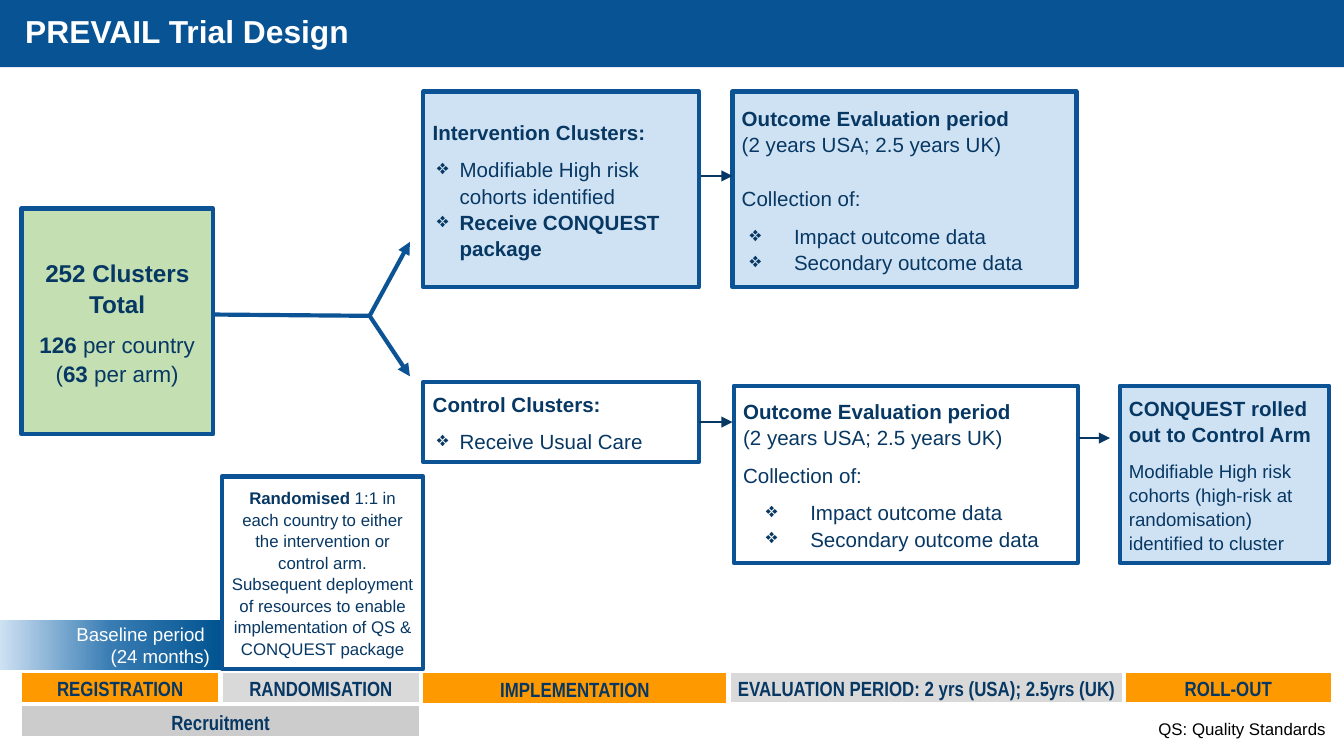
from copy import deepcopy

from lxml import etree
from pptx import Presentation
from pptx.dml.color import RGBColor
from pptx.enum import shapes, text
from pptx.oxml import ns
from pptx.util import Pt

BLUE, NAVY, PALE, WHITE = "0B5394", "073763", "CFE2F3", "FFFFFF"
ORANGE, GREY = "FF9900", "D9D9D9"
LEFT, CENTER, RIGHT = text.PP_ALIGN.LEFT, text.PP_ALIGN.CENTER, text.PP_ALIGN.RIGHT
TOP, MIDDLE = text.MSO_ANCHOR.TOP, text.MSO_ANCHOR.MIDDLE
BOLD = {"bold": True}


def color(value):
    return RGBColor.from_string(value)


def apply(target, **values):
    for name, value in values.items():
        setattr(target, name, value)


def para(*runs, before=0, indent=None):
    """Each run is a string or a (string, font values) pair."""
    return {"runs": runs, "before": before, "indent": indent}


def add_bullet(p, left, hanging):
    pPr = p._p.get_or_add_pPr()
    pPr.set("marL", str(Pt(left)))
    pPr.set("indent", str(-Pt(hanging)))
    clr = etree.SubElement(pPr, ns.qn("a:buClr"))
    etree.SubElement(clr, ns.qn("a:srgbClr"), val=NAVY)
    etree.SubElement(pPr, ns.qn("a:buChar"), char="❖")


def write(sp, paras, size=11, font="Arial", fill=NAVY, bold=False, align=LEFT,
          anchor=MIDDLE, spacing=1.07, inset=(5, 3)):
    tf = sp.text_frame
    x, y = map(Pt, inset)
    apply(tf, word_wrap=True, vertical_anchor=anchor, margin_left=x,
          margin_right=x, margin_top=y, margin_bottom=y)
    for i, item in enumerate(paras):
        p = tf.add_paragraph() if i else tf.paragraphs[0]
        if item["indent"]:
            add_bullet(p, *item["indent"])
        apply(p, alignment=align, line_spacing=spacing, space_before=Pt(item["before"]))
        for run in item["runs"]:
            words, values = run if isinstance(run, tuple) else (run, {})
            r = p.add_run()
            r.text = words
            apply(r.font, **{"size": Pt(size), "name": font, "bold": bold, **values})
            r.font.color.rgb = color(fill)


def add_box(slide, box, fill=None, line=None):
    sp = slide.shapes.add_shape(shapes.MSO_SHAPE.RECTANGLE, *map(Pt, box))
    sp.shadow.inherit = False
    if fill:
        sp.fill.solid()
        sp.fill.fore_color.rgb = color(fill)
    else:
        sp.fill.background()
    if line:
        sp.line.color.rgb = color(line)
        sp.line.width = Pt(2.25)
    else:
        sp.line.fill.background()
    return sp


def add_line(slide, start, end, stroke=NAVY, width=0.75, arrow=True):
    line = slide.shapes.add_connector(shapes.MSO_CONNECTOR.STRAIGHT, *map(Pt, start + end))
    line.line.color.rgb = color(stroke)
    line.line.width = Pt(width)
    if arrow:
        etree.SubElement(line.line._get_or_add_ln(), ns.qn("a:tailEnd"), type="triangle")
    etree.SubElement(line.element.spPr, ns.qn("a:effectLst"))
    return line


def header(slide, box):
    x, y, w, h = box
    title = slide.shapes.title
    apply(title, left=Pt(x + 9), top=Pt(y + 2), width=Pt(620), height=Pt(h - 4))
    title.element.addprevious(add_box(slide, box, "085394").element)
    write(title, [para("PREVAIL Trial Design")], size=17, fill=WHITE, bold=True, spacing=0.9)


def branch(slide, box):
    """A trunk that forks into an upper and a lower arrow."""
    x, y, w, h = box
    fork = (x + 85.7, y + 39.6)
    for tip in ((x + w, y), (x + w, y + h)):
        add_line(slide, fork, tip, BLUE, 2.25)
    add_line(slide, (x, fork[1] - 0.7), fork, BLUE, 2.25, arrow=False)


def clusters_total(slide, box):
    write(add_box(slide, box, "C4E0B2", BLUE), [
        para(("252 Clusters Total", {"bold": True, "size": Pt(13)})),
        para(("126 ", BOLD), "per country (", ("63", BOLD), " per arm)", before=6),
    ], size=12, align=CENTER)


def arm(slide, box, heading, items, fill=None):
    sp = add_box(slide, box, fill, BLUE)
    write(sp, [para((heading, BOLD))] + [
        para(item, before=0 if i else 6, indent=(14.4, 12.2))
        for i, item in enumerate(items)])
    return sp


def outcome(slide, box, fill, gap, indent):
    write(add_box(slide, box, fill, BLUE), [
        para(("Outcome Evaluation period", BOLD)),
        para("(2 years USA; 2.5 years UK)"),
        para("Collection of:", before=gap),
        para("Impact outcome data", before=6, indent=(indent, 23.8)),
        para("Secondary outcome data", indent=(indent, 23.8)),
    ])


def roll_out(slide, box):
    write(add_box(slide, box, PALE, BLUE), [
        para(("CONQUEST rolled out to Control Arm", {"bold": True, "size": Pt(11)})),
        para("Modifiable High risk cohorts (high-risk at randomisation) "
             "identified to cluster", before=6),
    ], size=10)


def randomised(slide, box):
    write(add_box(slide, box, None, BLUE), [
        para(("Randomised", BOLD), " 1:1 in each country", (" ", {"size": Pt(7)}),
             "to either the intervention or control arm."),
        para("Subsequent deployment of resources to enable implementation "
             "of QS & CONQUEST package"),
    ], size=9, align=CENTER)


def baseline(slide, box):
    sp = add_box(slide, box)
    sp.fill.gradient()
    sp.fill.gradient_angle = 180
    first = sp.element.spPr.find(".//" + ns.qn("a:gs"))
    first.addnext(deepcopy(first))
    stops = zip(sp.fill.gradient_stops, (0, 0.5, 1), ("005390", "387CB3", PALE))
    for stop, position, value in stops:
        stop.position = position
        stop.color.rgb = color(value)
    write(sp, [para("Baseline period "), para("(24 months)")], size=10, fill=WHITE,
          align=RIGHT, spacing=1.0, inset=(7.2, 7.2))


def timeline(slide, box):
    x, y, w, h = box
    phases = [  # label, left, top, width, fill, alignment
        ("REGISTRATION", 0, 0, 107.3, ORANGE, CENTER),
        ("RANDOMISATION", 107.3, 0, 107.7, GREY, CENTER),
        ("IMPLEMENTATION", 214.8, 0.4, 164.9, ORANGE, CENTER),
        ("EVALUATION PERIOD: 2 yrs (USA); 2.5yrs (UK)", 379.5, 0, 221, GREY, LEFT),
        ("ROLL-OUT", 591.2, 0, w - 591.2, ORANGE, CENTER),
        ("Recruitment", 0, h / 2, 214.8, "CCCCCC", CENTER),
    ]
    for label, left, top, width, fill, align in phases:
        sp = add_box(slide, (x + left, y + top, width, h / 2), fill, WHITE)
        write(sp, [para(label)], font="Arial Narrow", bold=True, align=align,
              anchor=TOP, spacing=1.0)


def footnote(slide, box):
    sp = slide.shapes.add_textbox(*map(Pt, box))
    write(sp, [para("QS: Quality Standards", (" ", {"size": Pt(10)}))], size=9,
          fill="000000", align=RIGHT, anchor=TOP, spacing=1.0, inset=(7.2, 7.2))


def main():
    prs = Presentation()
    prs.slide_width, prs.slide_height = Pt(720), Pt(405)
    slide = prs.slides.add_slide(prs.slide_layouts[5])

    # Header and flow from clusters to arms
    header(slide, (-0.5, 0, 720.5, 36))
    branch(slide, (112.3, 129.6, 107.3, 72))

    # Outcome boxes and roll-out
    outcome(slide, (392.4, 49, 184.3, 105), PALE, gap=15, indent=28)
    outcome(slide, (393.1, 206.6, 184.3, 95), WHITE, gap=6, indent=36)
    roll_out(slide, (599.8, 206.6, 112.3, 95))

    # Timeline and baseline
    timeline(slide, (10.8, 359.3, 703.4, 36))
    baseline(slide, (-0.5, 332, 120, 27))

    # Trial arms
    arm(slide, (226.8, 49, 147.6, 105), "Intervention Clusters:",
        ["Modifiable High risk cohorts identified",
         ("Receive CONQUEST package", BOLD)], PALE)
    control = arm(slide, (226.8, 204.5, 147.6, 43.2), "Control Clusters:",
                  ["Receive Usual Care"])
    clusters_total(slide, (11.5, 111.7, 102.6, 121))
    randomised(slide, (118.8, 255.3, 108, 103))

    # Arrows to the outcomes
    add_line(slide, (375.8, 94.3), (392.4, 94.3))
    add_line(slide, (374.4, 226.1), (392.4, 226.1)).begin_connect(control, 3)
    add_line(slide, (578.2, 234.7), (594.7, 234.7))

    footnote(slide, (491.8, 378, 228.2, 26.6))
    prs.save("out.pptx")


if __name__ == "__main__":
    main()
